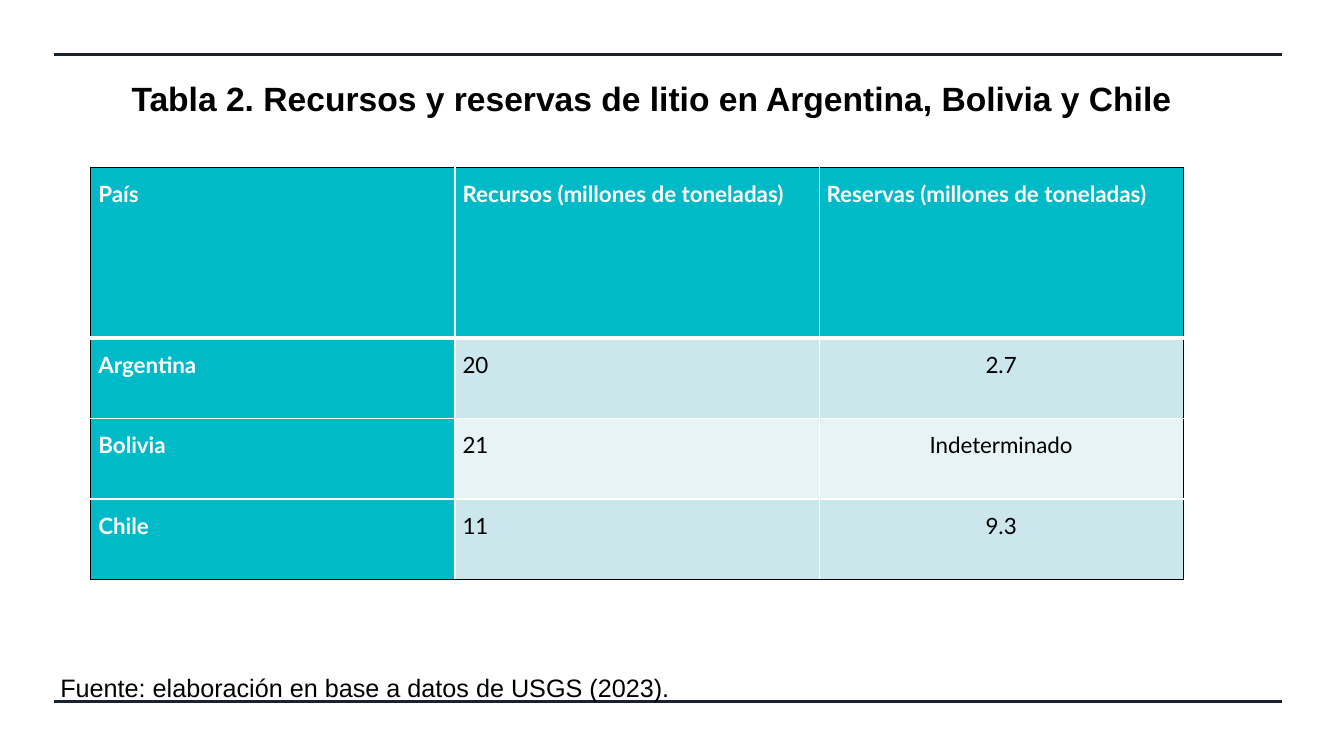
from lxml.etree import SubElement
from pptx import Presentation
from pptx.dml.color import RGBColor
from pptx.enum.shapes import MSO_CONNECTOR
from pptx.enum.text import MSO_ANCHOR, MSO_AUTO_SIZE, PP_ALIGN
from pptx.oxml import parse_xml
from pptx.oxml.ns import nsdecls, qn
from pptx.util import Cm, Pt

COLORS = {
    "rule": "182230",
    "text": "000000",
    "white": "FFFFFF",
    "header": "00BAC8",
    "odd_row": "CCE7EB",
    "even_row": "E7F3F5",
}
ROWS = [
    ["País", "Recursos (millones de toneladas)", "Reservas (millones de toneladas)"],
    ["Argentina ", "20", "2.7"],
    ["Bolivia ", "21", "Indeterminado"],
    ["Chile", "11", "9.3"],
]
HEADER_HEIGHT = 4.29


def color(name):
    return RGBColor.from_string(COLORS[name])


def write_paragraph(para, text, font, size, color_name, align, bold=False):
    para.text = text
    para.alignment = align
    para.font.name = font
    para.font.size = Pt(size)
    para.font.bold = bold
    para.font.color.rgb = color(color_name)


def space_paragraph(para):
    para.line_spacing = 1.5
    para.space_after = Pt(8)


def add_rule(page, left, top, width):
    rule = page.shapes.add_connector(
        MSO_CONNECTOR.STRAIGHT, Cm(left), Cm(top), Cm(left + width), Cm(top)
    )
    rule.line.color.rgb = color("rule")
    rule.line.width = Pt(2.25)
    SubElement(rule._element.spPr, qn("a:effectLst"))


def place_title(page, left, top, width, height):
    title = page.shapes.title
    title.left, title.top, title.width, title.height = map(Cm, (left, top, width, height))
    frame = title.text_frame
    frame.auto_size = MSO_AUTO_SIZE.NONE
    frame.vertical_anchor = MSO_ANCHOR.MIDDLE
    write_paragraph(
        frame.paragraphs[0],
        "Tabla 2. Recursos y reservas de litio en Argentina, Bolivia y Chile",
        "Arial", 24, "text", PP_ALIGN.CENTER, True,
    )


def set_borders(cell, row, column):
    last_row, last_column = len(ROWS) - 1, len(ROWS[0]) - 1
    outer_sides = {
        "L": column == 0,
        "R": column == last_column,
        "T": row == 0,
        "B": row == last_row,
    }
    properties = cell._tc.get_or_add_tcPr()
    for index, (side, outer) in enumerate(outer_sides.items()):
        under_header = (side, row) in (("B", 0), ("T", 1))
        width = Pt(3 if under_header else 1)
        line_color = COLORS["text" if outer else "white"]
        properties.insert(index, parse_xml(
            f'<a:ln{side} {nsdecls("a")} w="{width}"><a:solidFill>'
            f'<a:srgbClr val="{line_color}"/></a:solidFill></a:ln{side}>'
        ))


def fill_cell(cell, text, row, column):
    heading = row == 0 or column == 0
    cell.margin_left = cell.margin_right = Cm(0.19)
    cell.margin_top = cell.margin_bottom = 0
    cell.fill.solid()
    band = "odd_row" if row % 2 else "even_row"
    cell.fill.fore_color.rgb = color("header" if heading else band)
    centered = column == 2 and not heading
    para = cell.text_frame.paragraphs[0]
    write_paragraph(
        para, text, "Lato", 16, "white" if heading else "text",
        PP_ALIGN.CENTER if centered else PP_ALIGN.JUSTIFY, heading,
    )
    space_paragraph(para)
    set_borders(cell, row, column)


def add_lithium_table(page, left, top, width, height):
    row_count, column_count = len(ROWS), len(ROWS[0])
    table = page.shapes.add_table(
        row_count, column_count, Cm(left), Cm(top), Cm(width), Cm(height)
    ).table
    for column in table.columns:
        column.width = Cm(width / column_count)
    body_height = (height - HEADER_HEIGHT) / (row_count - 1)
    for row, values in enumerate(ROWS):
        table.rows[row].height = Cm(body_height if row else HEADER_HEIGHT)
        for column, text in enumerate(values):
            fill_cell(table.cell(row, column), text, row, column)


def add_source_note(page, left, top, width, height):
    box = page.shapes.add_textbox(Cm(left), Cm(top), Cm(width), Cm(height))
    box.text_frame.word_wrap = True
    para = box.text_frame.paragraphs[0]
    write_paragraph(
        para, "Fuente: elaboración en base a datos de USGS (2023).",
        "Arial", 18, "text", PP_ALIGN.JUSTIFY,
    )
    space_paragraph(para)


def main():
    deck = Presentation()
    deck.slide_width, deck.slide_height = Cm(33.87), Cm(19.05)
    page = deck.slides.add_slide(deck.slide_layouts[5])
    for top in (1.37, 17.68):
        add_rule(page, 1.35, top, 30.96)
    place_title(page, 1.65, 1.35, 29.54, 2.26)
    add_lithium_table(page, 2.29, 4.22, 27.53, 10.39)
    add_source_note(page, 1.27, 16.43, 16.94, 1.3)
    deck.save("out.pptx")


if __name__ == "__main__":
    main()
